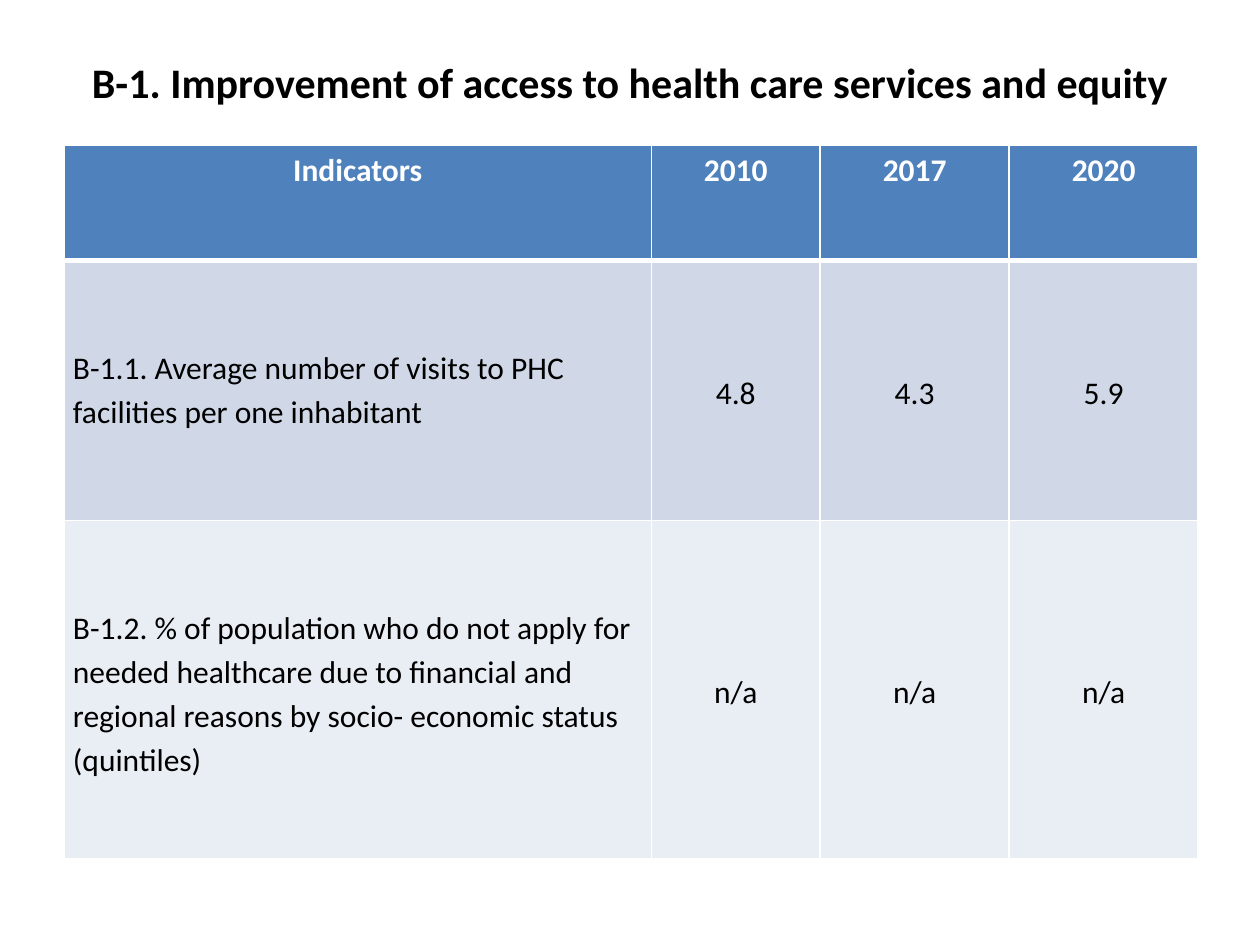
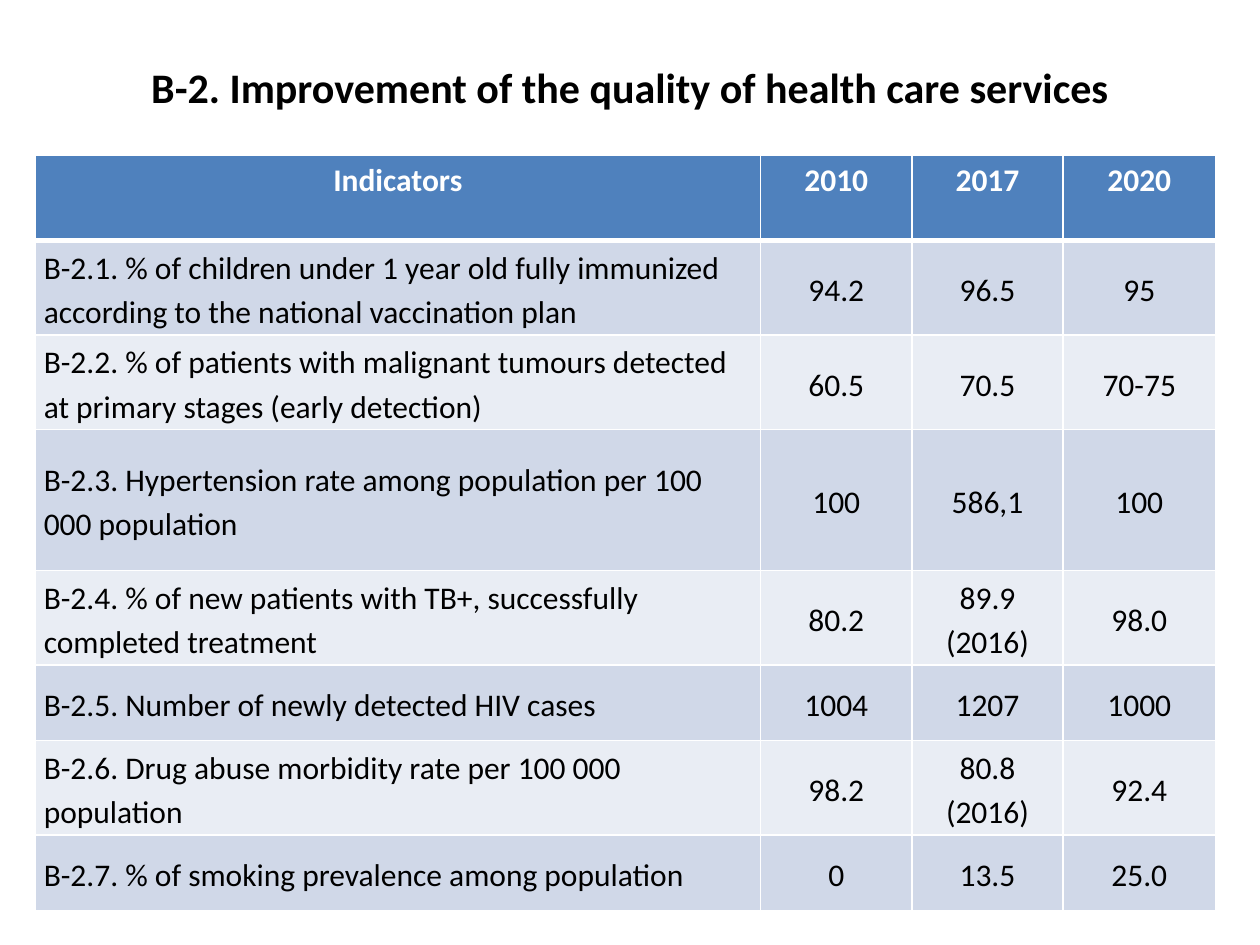
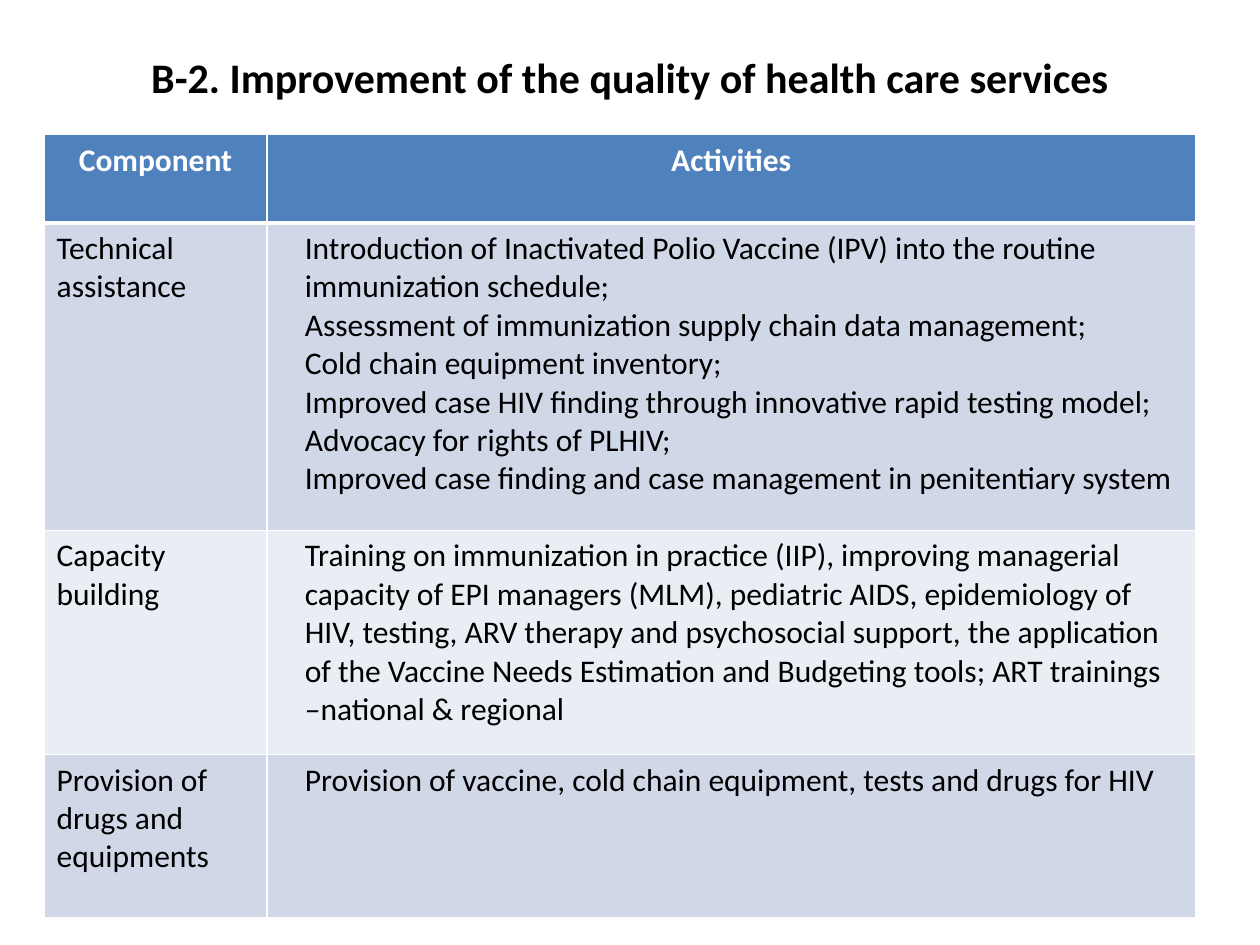
"""Build three slides of health indicator and activity tables."""
from lxml import etree
from pptx import Presentation
from pptx.dml.color import RGBColor
from pptx.enum.text import MSO_ANCHOR, PP_ALIGN
from pptx.oxml.ns import qn
from pptx.util import Pt

TOP, MIDDLE = MSO_ANCHOR.TOP, MSO_ANCHOR.MIDDLE
LEFT, CENTER = PP_ALIGN.LEFT, PP_ALIGN.CENTER
BLACK = RGBColor(0x00, 0x00, 0x00)
WHITE = RGBColor(0xFF, 0xFF, 0xFF)
HEADER = RGBColor(0x4F, 0x81, 0xBD)
BANDS = RGBColor(0xD0, 0xD8, 0xE8), RGBColor(0xE9, 0xED, 0xF4)
FONT = "Calibri"
TITLE_LEFT, TITLE_TOP, TITLE_WIDTH = 36, 21.6, 648
TITLE_SIZE, TEXT_SIZE = 24, 18
THIN, THICK = 1, 3

# Margins are left, top, right, bottom.
HEADER_STYLE = dict(margins=(7.2, 3.6, 7.2, 3.6), align=CENTER)
VALUE = dict(margins=(5, 0, 5, 0), anchor=MIDDLE, align=CENTER, spacing=1.15)
LABEL = dict(VALUE, align=LEFT)
LOWERED_LABEL = dict(LABEL, margins=(5, 47.5, 5, 0), anchor=TOP)
COMPONENT = dict(HEADER_STYLE, align=LEFT)
ACTIVITY = dict(COMPONENT, indent=14.4)

YEARS = ["Indicators", "2010", "2017", "2020"]

SLIDES = [
    dict(
        title="В-1. Improvement of access to health care services and equity",
        title_height=49.7, left=36.72, top=82.8,
        columns=[335.5, 96.5, 108, 108],
        heights=[66.24, 148.3, 193.7],
        styles=[LOWERED_LABEL, VALUE, VALUE, VALUE],
        rows=[
            YEARS,
            ["В-1.1. Average number of visits to PHC facilities per one inhabitant",
             "4.8", "4.3", "5.9"],
            ["В-1.2. % of population who do not apply for needed healthcare due to "
             "financial and regional reasons by socio- economic status (quintiles)",
             "n/a", "n/a", "n/a"],
        ],
    ),
    dict(
        title="В-2. Improvement of the quality of health care services",
        title_height=55.4, left=20, top=88.5,
        columns=[414.7, 86.4, 86.4, 87.1],
        heights=[49, 54, 54, 80.6, 54, 43.2, 54, 43.2],
        styles=[LABEL, VALUE, VALUE, VALUE],
        rows=[
            YEARS,
            ["В-2.1. % of children under 1 year old fully immunized according to "
             "the national vaccination plan", "94.2", "96.5", "95"],
            ["В-2.2. % of patients with malignant tumours detected at primary "
             "stages (early detection)", "60.5", "70.5", "70-75"],
            ["В-2.3. Hypertension rate among population per 100 000 population",
             "100", "586,1", "100"],
            ["В-2.4. % of new patients with ТB+, successfully completed treatment",
             "80.2", "89.9 (2016)", "98.0"],
            ["В-2.5. Number of newly detected HIV cases", "1004", "1207", "1000"],
            ["В-2.6. Drug abuse morbidity rate per 100 000 population",
             "98.2", "80.8\n(2016)", "92.4"],
            ["В-2.7. % of smoking prevalence among population",
             "0", "13.5", "25.0"],
        ],
    ),
    dict(
        title="В-2. Improvement of the quality of health care services",
        title_height=43.9, left=25.2, top=77,
        columns=[127.4, 530.6],
        heights=[50.4, 175.7, 128.2, 93],
        styles=[COMPONENT, ACTIVITY],
        rows=[
            ["Component", "Activities"],
            ["Technical assistance",
             "Introduction of Inactivated Polio Vaccine (IPV) into the routine "
             "immunization schedule;\n"
             "Assessment of immunization supply chain data management;\n"
             "Cold chain equipment inventory;\n"
             "Improved case HIV finding through innovative rapid testing model;\n"
             "Advocacy for rights of PLHIV;\n"
             "Improved case finding and case management in penitentiary system"],
            ["Capacity building",
             "Training on immunization in practice (IIP), improving managerial "
             "capacity of EPI managers (MLM), pediatric AIDS, epidemiology of HIV, "
             "testing, ARV therapy and psychosocial support, the application of the "
             "Vaccine Needs Estimation and Budgeting tools; ART trainings "
             "–national & regional"],
            ["Provision of drugs and equipments",
             "Provision of vaccine, cold chain equipment, tests and drugs for HIV"],
        ],
    ),
]


def set_font(p, size, color, bold):
    p.font.name, p.font.size, p.font.bold = FONT, Pt(size), bold
    p.font.color.rgb = color


def add_title(slide, text, height):
    sp = slide.shapes.title
    sp.left, sp.top = Pt(TITLE_LEFT), Pt(TITLE_TOP)
    sp.width, sp.height = Pt(TITLE_WIDTH), Pt(height)
    tf = sp.text_frame
    tf.text, tf.vertical_anchor = text, MIDDLE
    p = tf.paragraphs[0]
    p.alignment = CENTER
    set_font(p, TITLE_SIZE, BLACK, True)


def set_borders(cell, top, bottom):
    tc_pr = cell._tc.get_or_add_tcPr()
    for side, width in zip("LRTB", (THIN, THIN, top, bottom)):
        line = etree.SubElement(tc_pr, qn(f"a:ln{side}"), w=str(Pt(width)))
        fill = etree.SubElement(line, qn("a:solidFill"))
        etree.SubElement(fill, qn("a:srgbClr"), val=str(WHITE))


def fill_cell(cell, text, fill, color, bold, margins, align,
              anchor=TOP, spacing=None, indent=0):
    cell.fill.solid()
    cell.fill.fore_color.rgb = fill
    cell.margin_left, cell.margin_top, cell.margin_right, cell.margin_bottom = map(Pt, margins)
    cell.vertical_anchor = anchor
    cell.text = text
    for p in cell.text_frame.paragraphs:
        p.alignment = align
        set_font(p, TEXT_SIZE, color, bold)
        if spacing:
            p.line_spacing = spacing
        if indent:
            p._p.get_or_add_pPr().set("marL", str(Pt(indent)))


def add_table(slide, left, top, columns, heights, styles, rows):
    table = slide.shapes.add_table(len(rows), len(columns), Pt(left), Pt(top),
                                   Pt(sum(columns)), Pt(sum(heights))).table
    table.horz_banding = False
    for column, width in zip(table.columns, columns):
        column.width = Pt(width)
    for r, (row, height) in enumerate(zip(rows, heights)):
        table.rows[r].height = Pt(height)
        is_header = r == 0
        for c, text in enumerate(row):
            cell = table.cell(r, c)
            set_borders(cell, THICK if r == 1 else THIN, THICK if is_header else THIN)
            if is_header:
                fill_cell(cell, text, HEADER, WHITE, True, **HEADER_STYLE)
            else:
                fill_cell(cell, text, BANDS[(r - 1) % 2], BLACK, False, **styles[c])


def main():
    prs = Presentation()
    prs.slide_width, prs.slide_height = Pt(720), Pt(540)
    for content in SLIDES:
        slide = prs.slides.add_slide(prs.slide_layouts.get_by_name("Title Only"))
        add_title(slide, content["title"], content["title_height"])
        add_table(slide, *(content[key] for key in
                           ("left", "top", "columns", "heights", "styles", "rows")))
    prs.save("out.pptx")


if __name__ == "__main__":
    main()
